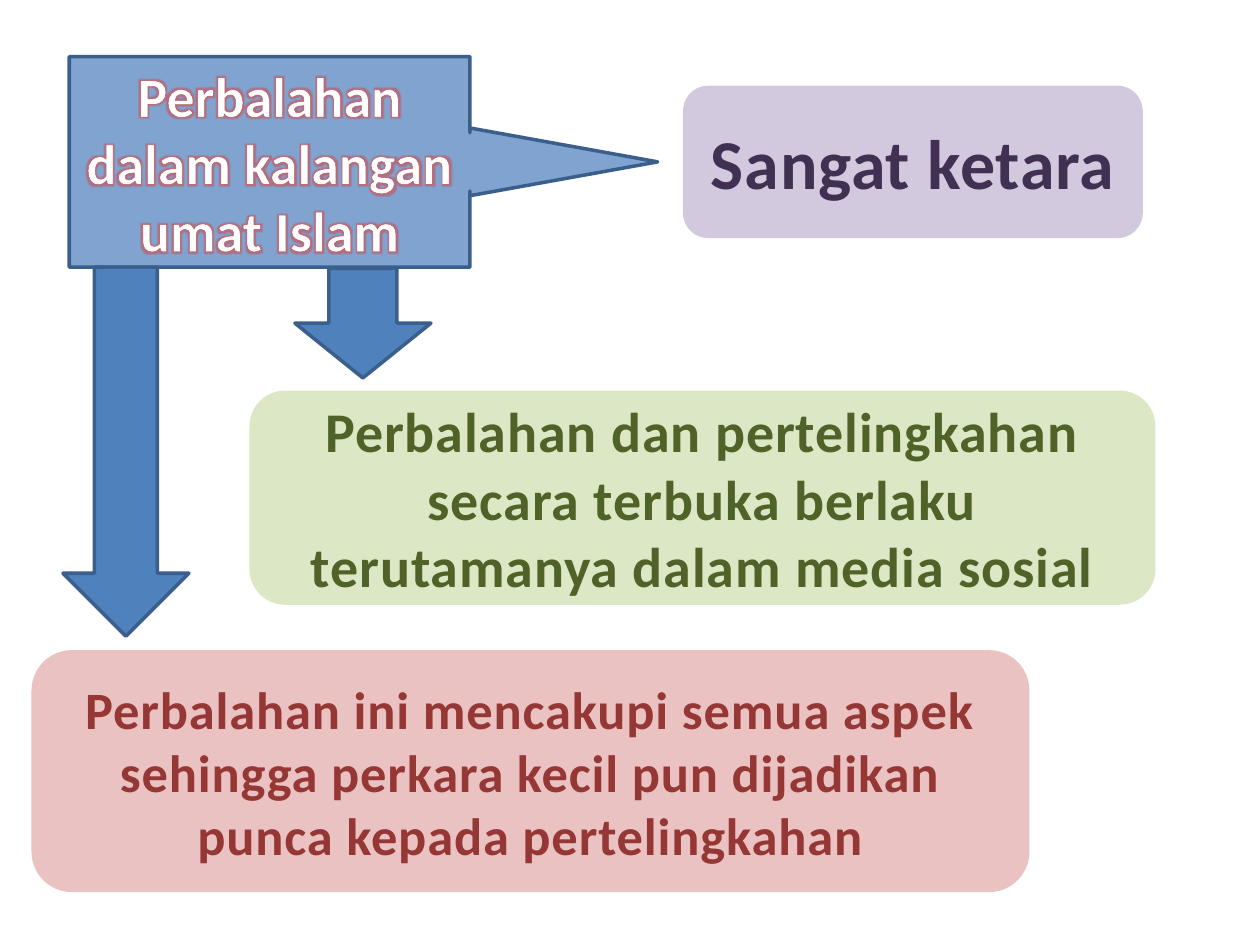
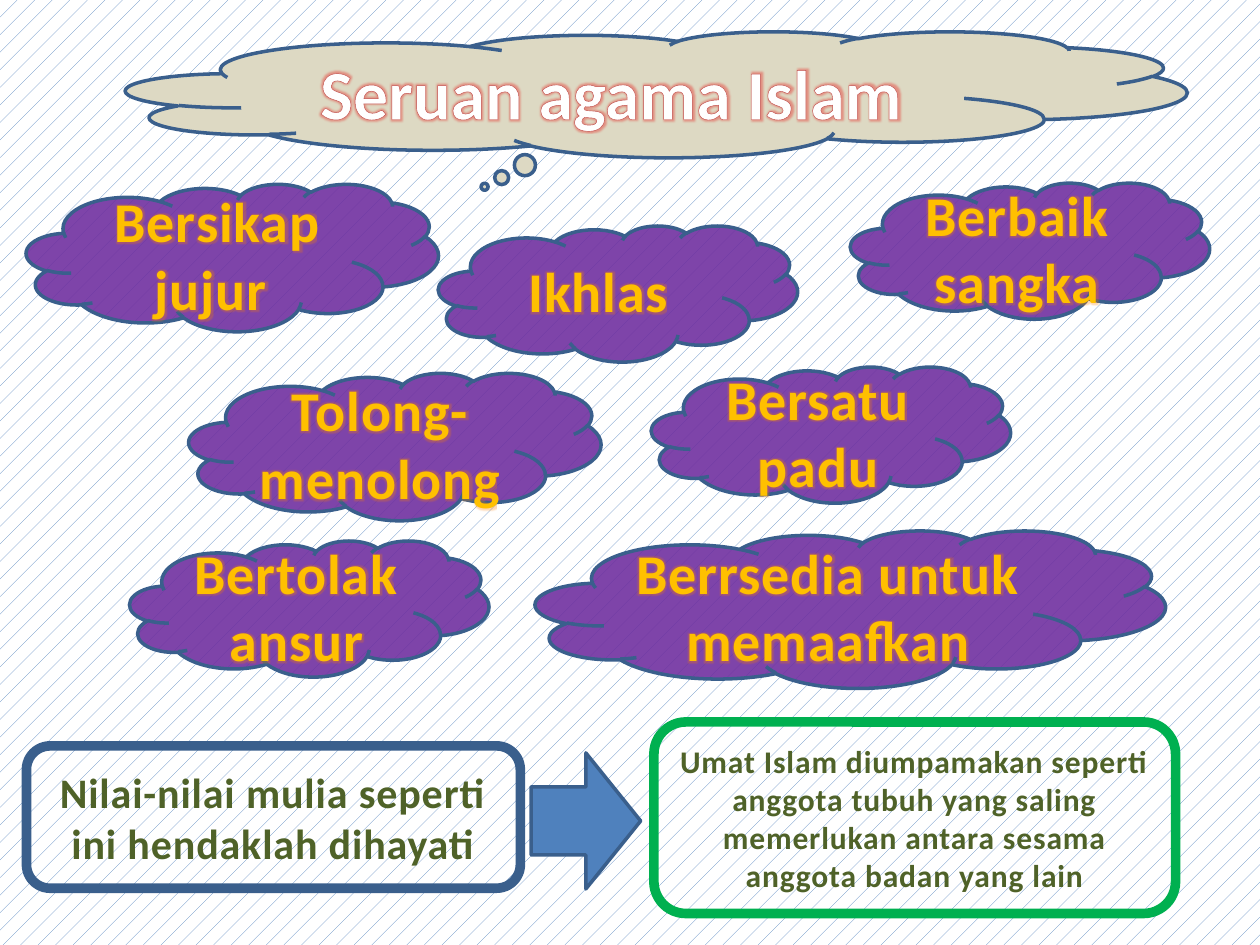
from dataclasses import dataclass

from lxml.etree import SubElement
from pptx import Presentation
from pptx.dml.color import RGBColor
from pptx.enum.dml import MSO_PATTERN
from pptx.enum.shapes import MSO_SHAPE
from pptx.enum.text import MSO_ANCHOR, PP_ALIGN
from pptx.oxml import parse_xml
from pptx.oxml.ns import nsdecls, qn
from pptx.util import Inches, Pt


@dataclass(frozen=True)
class Theme:
    font: str = "Calibri"
    white: str = "FFFFFF"
    blue: str = "4F81BD"
    blue_edge: str = "3A5F8C"
    lilac: str = "CCC1DA"
    dark_purple: str = "403152"
    light_green: str = "D7E4BD"
    dark_green: str = "4F6228"
    bright_green: str = "00B050"
    pink: str = "E6B9B8"
    dark_red: str = "953735"
    tan: str = "DDD9C3"
    purple: str = "7030A0"
    gold: str = "FFC000"
    title_size: int = 40
    large_size: int = 32
    medium_size: int = 30
    note_size: int = 24
    small_size: int = 18
    edge_width: float = 2
    frame_width: float = 5.5
    spacing: int = 50


@dataclass(frozen=True)
class TextEffect:
    """Letter outline and the soft glow around it."""
    outline: str
    outline_width: float
    glow: str
    glow_radius: float
    glow_opacity: int


THEME = Theme()
RED_GLOW = TextEffect("C0504D", 0.52, "EA2420", 3.6, 40)
ORANGE_GLOW = TextEffect("E78738", 1, "FF8000", 4.2, 30)


def add_text_effect(run, effect):
    properties = run.font._element
    properties.insert(0, parse_xml(
        f'<a:ln {nsdecls("a")} w="{Pt(effect.outline_width)}"><a:solidFill>'
        f'<a:srgbClr val="{effect.outline}"/></a:solidFill></a:ln>'))
    properties.find(qn("a:solidFill")).addnext(parse_xml(
        f'<a:effectLst {nsdecls("a")}><a:glow rad="{Pt(effect.glow_radius)}">'
        f'<a:srgbClr val="{effect.glow}"><a:alpha val="{effect.glow_opacity * 1000}"/>'
        f'</a:srgbClr></a:glow></a:effectLst>'))


def write_text(shape, text, *, size, color, spacing=THEME.spacing, effect=None):
    frame = shape.text_frame
    frame.word_wrap = True
    frame.vertical_anchor = MSO_ANCHOR.MIDDLE
    paragraph = frame.paragraphs[0]
    paragraph.alignment = PP_ALIGN.CENTER
    run = paragraph.add_run()
    run.text = text
    run.font.size = Pt(size)
    run.font.bold = True
    run.font.color.rgb = RGBColor.from_string(color)
    run.font.name = THEME.font
    if spacing:
        run.font._element.set("spc", str(spacing))
    if effect:
        add_text_effect(run, effect)


class Deck:
    def __init__(self, theme):
        self.theme = theme
        self.presentation = Presentation()
        self.presentation.slide_width = Inches(10)
        self.presentation.slide_height = Inches(7.5)
        self.slide = None

    def add_slide(self):
        self.slide = self.presentation.slides.add_slide(self.presentation.slide_layouts[6])

    def add_pattern(self):
        fill = self.slide.background.fill
        fill.patterned()
        fill.pattern = MSO_PATTERN.PERCENT_5
        fill.fore_color.rgb = RGBColor.from_string(self.theme.blue)
        fill.back_color.rgb = RGBColor.from_string(self.theme.white)

    def add_shape(self, kind, place, *, fill=None, opacity=100, line=None,
                  line_width=THEME.edge_width, adjustments=()):
        shape = self.slide.shapes.add_shape(kind, *map(Inches, place))
        shape.shadow.inherit = False
        for index, value in enumerate(adjustments):
            shape.adjustments[index] = value
        if fill:
            shape.fill.solid()
            shape.fill.fore_color.rgb = RGBColor.from_string(fill)
            if opacity < 100:
                color = shape._element.spPr.find(qn("a:solidFill"))[0]
                SubElement(color, qn("a:alpha"), val=str(opacity * 1000))
        else:
            shape.fill.background()
        if line:
            shape.line.color.rgb = RGBColor.from_string(line)
            shape.line.width = Pt(line_width)
        else:
            shape.line.fill.background()
        return shape

    def add_panel(self, place, text, *, fill, color, size):
        panel = self.add_shape(MSO_SHAPE.ROUNDED_RECTANGLE, place, fill=fill, opacity=87)
        write_text(panel, text, size=size, color=color)

    def add_frame(self, place, text, *, line, size):
        frame = self.add_shape(MSO_SHAPE.ROUNDED_RECTANGLE, place, line=line,
                               line_width=self.theme.frame_width)
        write_text(frame, text, size=size, color=self.theme.dark_green)

    def add_heading(self, kind, place, text, *, size, **style):
        heading = self.add_shape(kind, place, line=self.theme.blue_edge, **style)
        write_text(heading, text, size=size, color=self.theme.white, spacing=0,
                   effect=RED_GLOW)

    def add_cloud(self, place, text):
        cloud = self.add_shape(MSO_SHAPE.CLOUD, place, fill=self.theme.purple, opacity=90,
                               line=self.theme.blue_edge)
        write_text(cloud, text, size=self.theme.large_size, color=self.theme.gold,
                   effect=ORANGE_GLOW)

    def add_arrow(self, place, rotation=0):
        arrow = self.add_shape(MSO_SHAPE.DOWN_ARROW, place, fill=self.theme.blue,
                               line=self.theme.blue_edge)
        arrow.rotation = rotation


def build_dispute_slide(deck):
    theme = deck.theme
    deck.add_slide()

    # Statements
    deck.add_panel((5.42, 0.68, 3.65, 1.21), "Sangat ketara",
                   fill=theme.lilac, color=theme.dark_purple, size=theme.title_size)
    deck.add_panel((1.98, 3.1, 7.19, 1.7),
                   "Perbalahan dan pertelingkahan secara terbuka berlaku "
                   "terutamanya dalam media sosial",
                   fill=theme.light_green, color=theme.dark_green, size=theme.large_size)
    deck.add_panel((0.25, 5.16, 7.92, 1.92),
                   "Perbalahan ini mencakupi semua aspek sehingga perkara kecil pun "
                   "dijadikan punca kepada pertelingkahan",
                   fill=theme.pink, color=theme.dark_red, size=theme.medium_size)

    # Topic and its arrows
    deck.add_heading(MSO_SHAPE.RIGHT_ARROW_CALLOUT, (0.55, 0.45, 4.67, 1.67),
                     "Perbalahan dalam kalangan umat Islam", size=theme.large_size,
                     fill=theme.blue, opacity=72, adjustments=(0.276, 0.161, 0.892, 0.712))
    deck.add_arrow((2.34, 2.13, 1.08, 0.87))
    deck.add_arrow((0.5, 2.12, 1, 2.93))


def build_values_slide(deck):
    theme = deck.theme
    deck.add_slide()
    deck.add_pattern()
    deck.add_heading(MSO_SHAPE.CLOUD_CALLOUT, (1, 0.25, 8.42, 1), "Seruan agama Islam ",
                     size=theme.title_size, fill=theme.tan, adjustments=(-0.162, 0.733))

    # Clouds of values
    small, medium, large = (2.85, 1.08), (3.27, 1.17), (5, 1.25)
    for left, top, size, text in (
        (0.21, 1.46, medium, "Bersikap jujur "),
        (3.48, 1.79, small, "Ikhlas "),
        (6.75, 1.45, small, "Berbaik sangka"),
        (1.5, 2.96, medium, "Tolong- menolong"),
        (5.17, 2.91, small, "Bersatu padu"),
        (1.03, 4.29, small, "Bertolak ansur"),
        (4.25, 4.21, large, "Berrsedia untuk memaafkan"),
    ):
        deck.add_cloud((left, top, *size), text)

    # Conclusion
    deck.add_frame((0.21, 5.92, 3.92, 1.13),
                   "Nilai-nilai mulia seperti ini hendaklah dihayati",
                   line=theme.blue_edge, size=theme.note_size)
    deck.add_arrow((4.11, 6.08, 1.08, 0.87), rotation=270)
    deck.add_frame((5.19, 5.73, 4.14, 1.52),
                   "Umat Islam diumpamakan seperti anggota tubuh yang saling memerlukan "
                   "antara sesama anggota badan yang lain",
                   line=theme.bright_green, size=theme.small_size)


def main():
    deck = Deck(THEME)
    build_dispute_slide(deck)
    build_values_slide(deck)
    deck.presentation.save("out.pptx")


if __name__ == "__main__":
    main()
